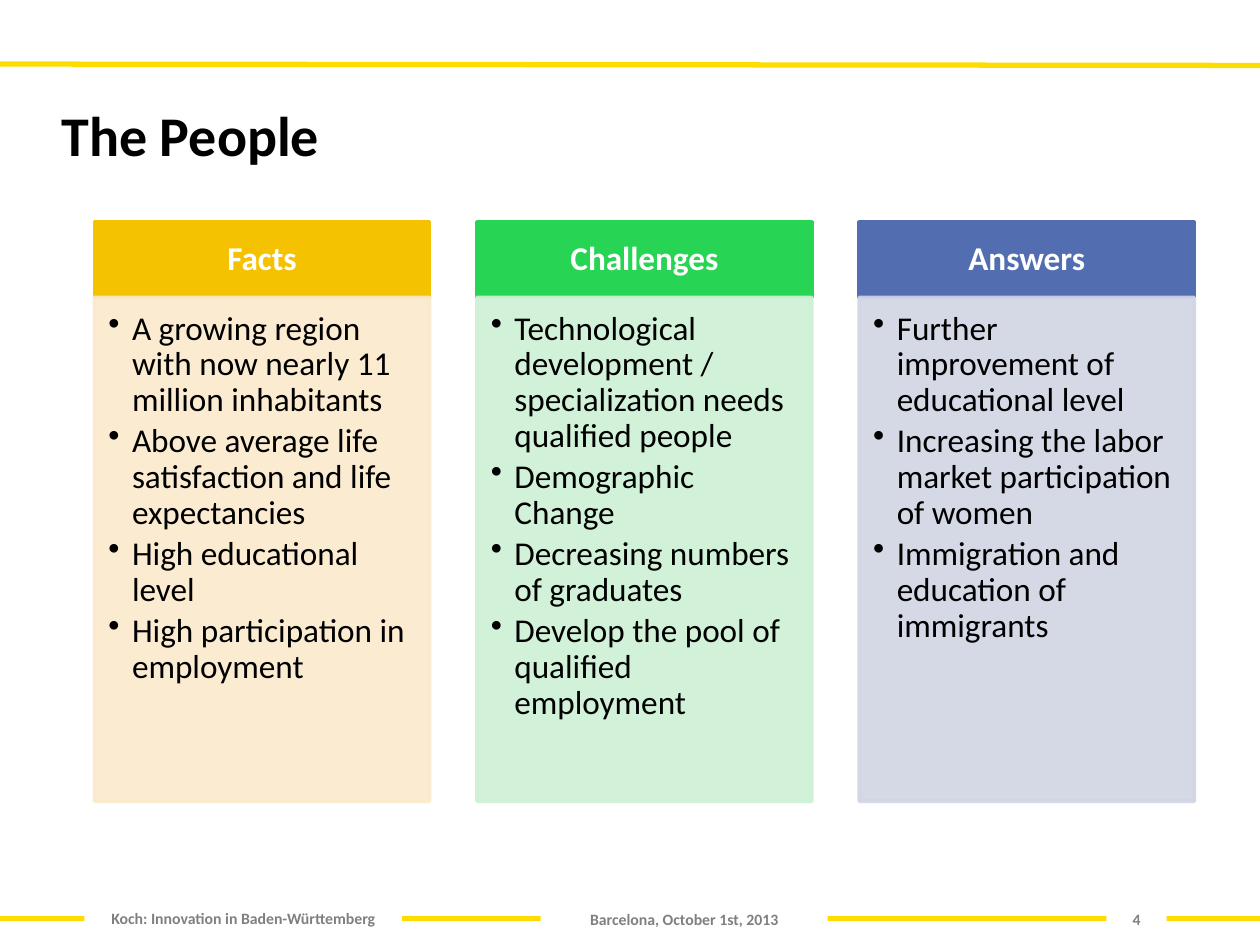
from lxml.etree import SubElement
from pptx import Presentation
from pptx.dml.color import RGBColor
from pptx.enum.shapes import MSO_CONNECTOR, MSO_SHAPE
from pptx.enum.text import MSO_ANCHOR, MSO_AUTO_SIZE, PP_ALIGN
from pptx.oxml.ns import qn
from pptx.util import Pt

FONT = "Calibri"
YELLOW = "FFDC00"
GREY = "808080"
WHITE = "FFFFFF"
BLACK = "000000"

# Column grid
COLUMN_LEFT, COLUMN_WIDTH, COLUMN_PITCH = 54, 191.5, 218.5
HEADER_TOP, HEADER_HEIGHT, BODY_HEIGHT = 126.7, 43.2, 288
BULLET_INDENT = 13.5

COLUMNS = [
    ("Facts", "F5C201", "FBE9CC", [
        "A growing region with now nearly 11 million inhabitants",
        "Above average life satisfaction and life expectancies",
        "High educational level",
        "High participation in employment",
    ]),
    ("Challenges", "28D453", "CDF1D4", [
        "Technological development / specialization needs qualified people",
        "Demographic Change",
        "Decreasing numbers of graduates",
        "Develop the pool of qualified employment",
    ]),
    ("Answers", "526DB0", "D1D5E4", [
        "Further improvement of educational level",
        "Increasing the labor market participation of women",
        "Immigration and education of immigrants",
    ]),
]

FOOTERS = [
    ("Barcelona, October 1st, 2013", (309, 516.2, 164, 18), MSO_ANCHOR.BOTTOM),
    ("Koch: Innovation in Baden-Württemberg", (48.2, 517, 181.5, 16.6), MSO_ANCHOR.BOTTOM),
    ("4", (632.2, 514, 34.5, 23), MSO_ANCHOR.MIDDLE),
]


def rgb(color):
    return RGBColor.from_string(color)


def set_alpha(fill_format, percent):
    # The colour element sits directly under solidFill
    for color in fill_format.iter(qn("a:srgbClr")):
        SubElement(color, qn("a:alpha"), val=str(percent * 1000))


def add_bullet(paragraph):
    properties = paragraph._p.get_or_add_pPr()
    properties.set("marL", str(Pt(BULLET_INDENT)))
    properties.set("indent", str(-Pt(BULLET_INDENT)))
    SubElement(properties, qn("a:buChar"), char="•")
    paragraph.level = 1


def write(frame, lines, *, size, color=BLACK, bold=False, align=PP_ALIGN.LEFT,
          anchor=MSO_ANCHOR.TOP, margins=(7.2, 3.6, 7.2, 3.6), wrap=True,
          bullets=False, line_spacing=None, space_after=None):
    frame.word_wrap = wrap
    frame.vertical_anchor = anchor
    (frame.margin_left, frame.margin_top,
     frame.margin_right, frame.margin_bottom) = map(Pt, margins)
    for index, line in enumerate(lines):
        paragraph = frame.paragraphs[0] if index == 0 else frame.add_paragraph()
        if bullets:
            add_bullet(paragraph)
        paragraph.alignment = align
        if line_spacing:
            paragraph.line_spacing = line_spacing
        if space_after:
            paragraph.space_after = Pt(space_after)
        run = paragraph.add_run()
        run.text = line
        run.font.name = FONT
        run.font.size = Pt(size)
        run.font.bold = bold
        run.font.color.rgb = rgb(color)


def add_panel(slide, box, fill, *, outlined=False, alpha=None):
    panel = slide.shapes.add_shape(MSO_SHAPE.RECTANGLE, *map(Pt, box))
    panel.shadow.inherit = False
    panel.fill.solid()
    panel.fill.fore_color.rgb = rgb(fill)
    if outlined:
        panel.line.color.rgb = rgb(fill)
        panel.line.width = Pt(2)
    else:
        panel.line.fill.background()
    if alpha:
        set_alpha(panel._element.spPr, alpha)
    return panel


def add_rule(slide, start_y, end_y):
    rule = slide.shapes.add_connector(
        MSO_CONNECTOR.STRAIGHT, Pt(0), Pt(start_y), Pt(720), Pt(end_y))
    rule.line.color.rgb = rgb(YELLOW)
    rule.line.width = Pt(3)
    SubElement(rule._element.spPr, qn("a:effectLst"))


def add_column(slide, left, heading, header_fill, body_fill, points):
    header = add_panel(slide, (left, HEADER_TOP, COLUMN_WIDTH, HEADER_HEIGHT),
                       header_fill, outlined=True)
    write(header.text_frame, [heading], size=19, color=WHITE, bold=True,
          align=PP_ALIGN.CENTER, anchor=MSO_ANCHOR.MIDDLE,
          margins=(10.8, 5.8, 10.8, 5.8), line_spacing=0.9)
    body = add_panel(slide, (left, HEADER_TOP + HEADER_HEIGHT, COLUMN_WIDTH, BODY_HEIGHT),
                     body_fill, outlined=True, alpha=90)
    write(body.text_frame, points, size=19, margins=(8, 8, 10.8, 12),
          bullets=True, line_spacing=0.9, space_after=2.85)


def main():
    presentation = Presentation()
    presentation.slide_width = Pt(720)
    presentation.slide_height = Pt(540)
    slide = presentation.slides.add_slide(presentation.slide_layouts[6])

    # Yellow rules, with the footer texts interrupting the lower one
    add_rule(slide, 525, 525)
    add_rule(slide, 36.6, 37.4)
    for text, box, anchor in FOOTERS:
        footer = add_panel(slide, box, WHITE)
        write(footer.text_frame, [text], size=9, color=GREY, bold=True,
              align=PP_ALIGN.CENTER, anchor=anchor)

    # Title
    title = slide.shapes.add_textbox(Pt(28), Pt(54), Pt(163.5), Pt(46))
    write(title.text_frame, ["The People"], size=32, bold=True, wrap=False)
    title.text_frame.auto_size = MSO_AUTO_SIZE.SHAPE_TO_FIT_TEXT

    # Three columns
    for index, column in enumerate(COLUMNS):
        add_column(slide, COLUMN_LEFT + index * COLUMN_PITCH, *column)

    presentation.save("out.pptx")


if __name__ == "__main__":
    main()
